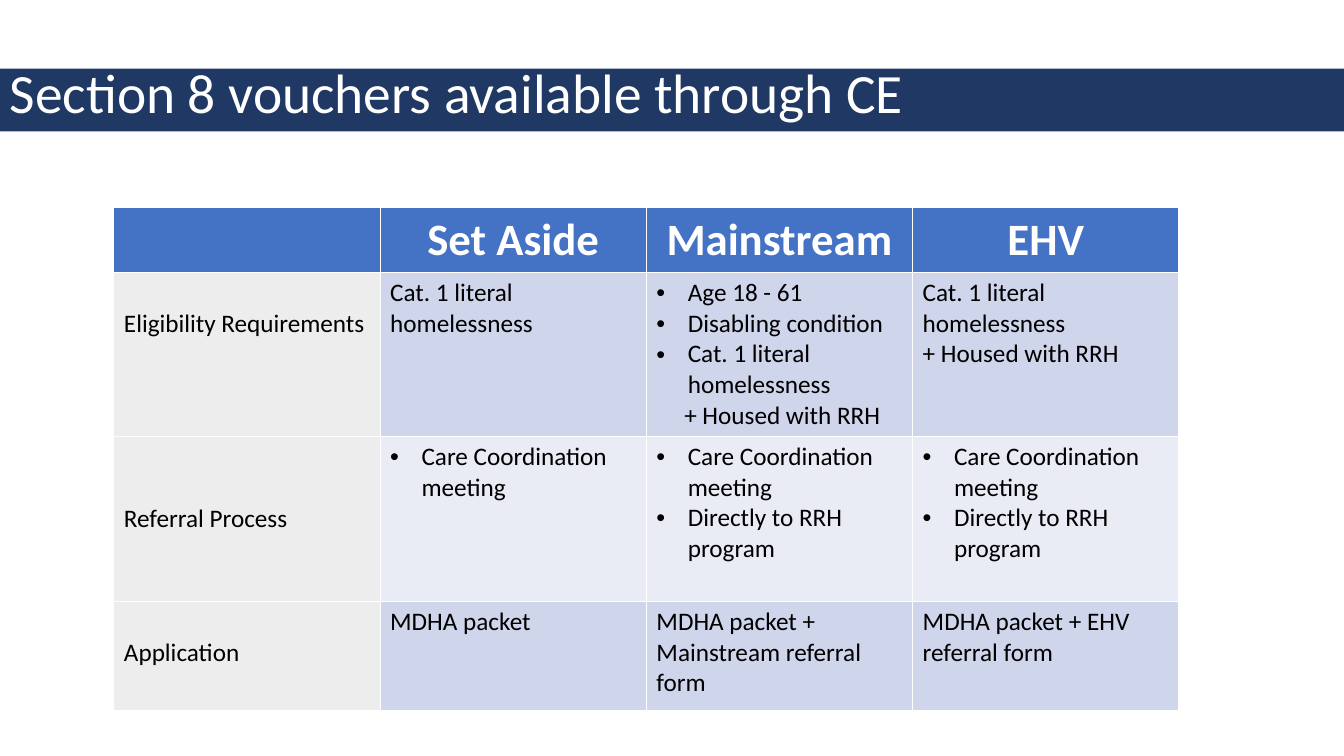
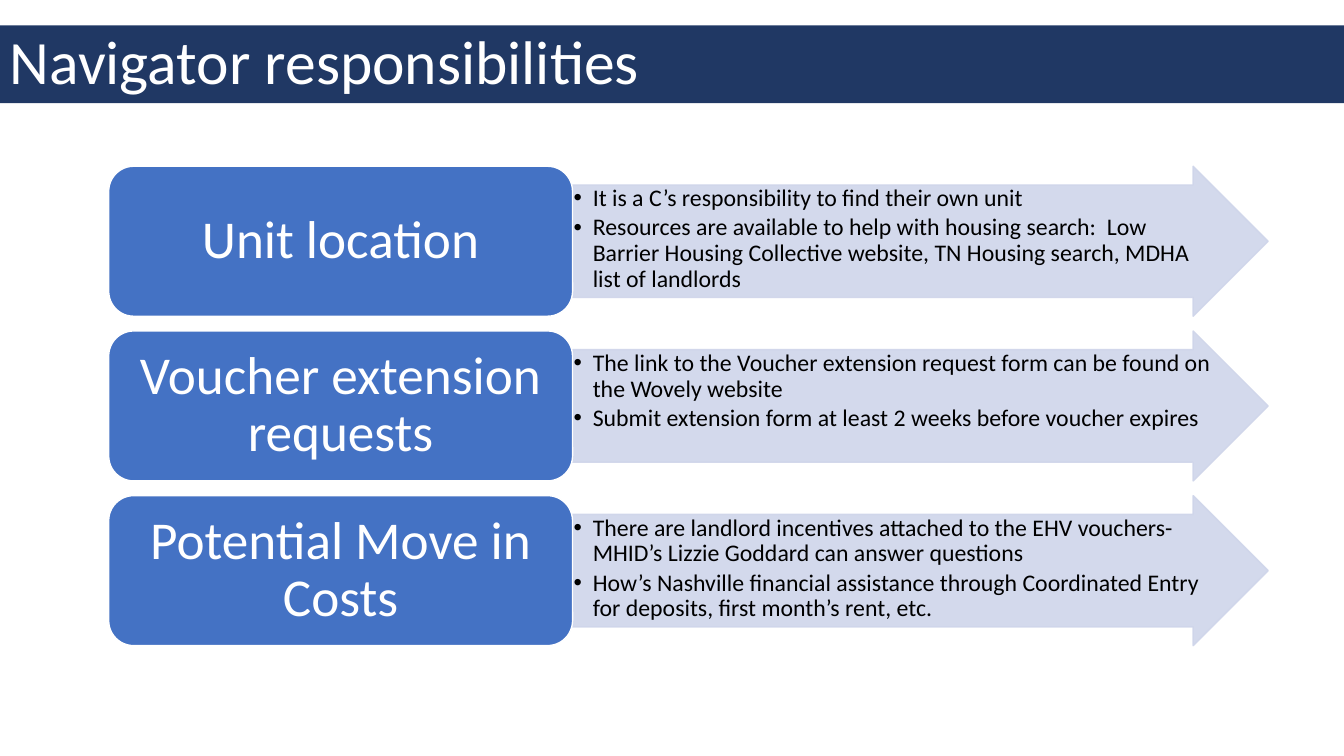
from lxml.etree import SubElement
from pptx import Presentation
from pptx.dml.color import RGBColor
from pptx.enum.shapes import MSO_SHAPE
from pptx.enum.text import MSO_ANCHOR, PP_ALIGN
from pptx.oxml.ns import qn
from pptx.util import Cm, Pt

FONT = "Calibri"
NAVY = "203864"
BLUE = "4472C4"
LAVENDER = "CFD5EA"
PALE_LAVENDER = "E9EBF5"
PALE_GRAY = "EDEDED"
WHITE = "FFFFFF"
BLACK = "000000"


def paint(fill, color):
    """Make a shape, line, cell or font fill solid in a hex colour."""
    fill.solid()
    fill.fore_color.rgb = RGBColor.from_string(color)


def set_bullet(para, indent):
    """Give the paragraph a bullet with a hanging indent; call before setting its font."""
    properties = para._p.get_or_add_pPr()
    properties.set("marL", str(indent))
    properties.set("indent", str(-indent))
    SubElement(properties, qn("a:buFont"), typeface="Arial")
    SubElement(properties, qn("a:buChar"), char="•")


deck = Presentation()
deck.slide_width = Cm(33.87)
deck.slide_height = Cm(19.05)

# Pages with their title bands: title, top, height, text size, line spacing
pages = []
for title, top, height, size, spacing in [
    ("Section 8 vouchers available through CE", 1.73, 1.58, 39.6, 0.7),
    ("Navigator responsibilities", 0.64, 1.96, 44, 0.9),
]:
    page = deck.slides.add_slide(deck.slide_layouts[6])
    pages.append(page)
    band = page.shapes.add_shape(
        MSO_SHAPE.RECTANGLE, 0, Cm(top), deck.slide_width, Cm(height)
    )
    band.shadow.inherit = False
    paint(band.fill, NAVY)
    band.line.fill.background()
    band.text_frame.word_wrap = True
    band.text_frame.vertical_anchor = MSO_ANCHOR.MIDDLE
    para = band.text_frame.paragraphs[0]
    para.text = title
    para.alignment = PP_ALIGN.LEFT
    para.line_spacing = spacing
    para.font.name = FONT
    para.font.size = Pt(size)
    paint(para.font.fill, WHITE)

voucher_page, navigator_page = pages

# Voucher table; lines that start with "•" become bullets
care_meeting = "• Care Coordination meeting"
direct_referral = "• Directly to RRH program"
voucher_rows = [
    [[""], ["Set Aside"], ["Mainstream"], ["EHV"]],
    [
        ["Eligibility Requirements"],
        ["Cat. 1 literal homelessness"],
        [
            "• Age 18 - 61",
            "• Disabling condition",
            "• Cat. 1 literal homelessness",
            "+ Housed with RRH",
        ],
        ["Cat. 1 literal homelessness", "+ Housed with RRH"],
    ],
    [
        ["Referral Process"],
        [care_meeting],
        [care_meeting, direct_referral],
        [care_meeting, direct_referral],
    ],
    [
        ["Application"],
        ["MDHA packet"],
        ["MDHA packet + Mainstream referral form"],
        ["MDHA packet + EHV referral form"],
    ],
]
row_heights = [1.6, 4.12, 4.16, 2.74]
row_fills = [BLUE, LAVENDER, PALE_LAVENDER, LAVENDER]
label_margins = [0.13, 0.9, 1.68, 0.9]
column_width = 6.71

table = voucher_page.shapes.add_table(
    4, 4, Cm(2.87), Cm(5.23), Cm(4 * column_width), Cm(sum(row_heights))
).table
for column in table.columns:
    column.width = Cm(column_width)

for row_index, row in enumerate(voucher_rows):
    table.rows[row_index].height = Cm(row_heights[row_index])
    is_header = row_index == 0
    for column_index, lines in enumerate(row):
        cell = table.cell(row_index, column_index)
        is_label = column_index == 0 and not is_header
        paint(cell.fill, PALE_GRAY if is_label else row_fills[row_index])
        if is_label:
            cell.margin_top = Cm(label_margins[row_index])
        cell.text = "\n".join(line.removeprefix("• ") for line in lines)
        for line, para in zip(lines, cell.text_frame.paragraphs):
            if line.startswith("•"):
                set_bullet(para, Cm(0.79))
            elif lines[0].startswith("•"):
                para._p.get_or_add_pPr().set("marL", str(Cm(0.7)))
            para.alignment = PP_ALIGN.CENTER if is_header else PP_ALIGN.LEFT
            para.font.name = FONT
            para.font.size = Pt(32 if is_header else 18)
            para.font.bold = is_header
            paint(para.font.fill, WHITE if is_header else BLACK)

# Navigator duties: a label box followed by an arrow of details
duties = [
    (
        "Unit location",
        [
            "It is a C’s responsibility to find their own unit",
            "Resources are available to help with housing search:  Low Barrier Housing "
            "Collective website, TN Housing search, MDHA list of landlords",
        ],
    ),
    (
        "Voucher extension requests",
        [
            "The link to the Voucher extension request form can be found on the Wovely website",
            "Submit extension form at least 2 weeks before voucher expires",
        ],
    ),
    (
        "Potential Move in Costs",
        [
            "There are landlord incentives attached to the EHV vouchers- MHID’s Lizzie "
            "Goddard can answer questions",
            "How’s Nashville financial assistance through Coordinated Entry for deposits, "
            "first month’s rent, etc.",
        ],
    ),
]
label_left, label_width, arrow_width = 2.74, 11.69, 17.53
duty_top, duty_height, duty_pitch = 4.19, 3.78, 4.15

for index, (label, details) in enumerate(duties):
    top = Cm(duty_top + index * duty_pitch)
    arrow = navigator_page.shapes.add_shape(
        MSO_SHAPE.RIGHT_ARROW,
        Cm(label_left + label_width), top, Cm(arrow_width), Cm(duty_height),
    )
    arrow.adjustments[0] = 0.75
    arrow.adjustments[1] = 0.5
    box = navigator_page.shapes.add_shape(
        MSO_SHAPE.ROUNDED_RECTANGLE,
        Cm(label_left), top, Cm(label_width), Cm(duty_height),
    )

    for shape, lines, fill, line_color, side_inset, end_inset, size, color in [
        (arrow, details, LAVENDER, LAVENDER, 0.03, 0.03, 17, BLACK),
        (box, [label], BLUE, WHITE, 0.41, 0.2, 38, WHITE),
    ]:
        shape.shadow.inherit = False
        paint(shape.fill, fill)
        paint(shape.line.fill, line_color)
        shape.line.width = Pt(1)
        frame = shape.text_frame
        frame.word_wrap = True
        frame.margin_left = frame.margin_right = Cm(side_inset)
        frame.margin_top = frame.margin_bottom = Cm(end_inset)
        frame.vertical_anchor = MSO_ANCHOR.TOP if shape is arrow else MSO_ANCHOR.MIDDLE
        frame.text = "\n".join(lines)
        for para in frame.paragraphs:
            if shape is arrow:
                set_bullet(para, Cm(0.48))
                para.space_after = Pt(2.5)
            para.alignment = PP_ALIGN.LEFT if shape is arrow else PP_ALIGN.CENTER
            para.line_spacing = 0.9
            para.font.name = FONT
            para.font.size = Pt(size)
            paint(para.font.fill, color)

    for color_element in arrow.element.spPr.iter(qn("a:srgbClr")):
        SubElement(color_element, qn("a:alpha"), val="90000")

deck.save("out.pptx")
